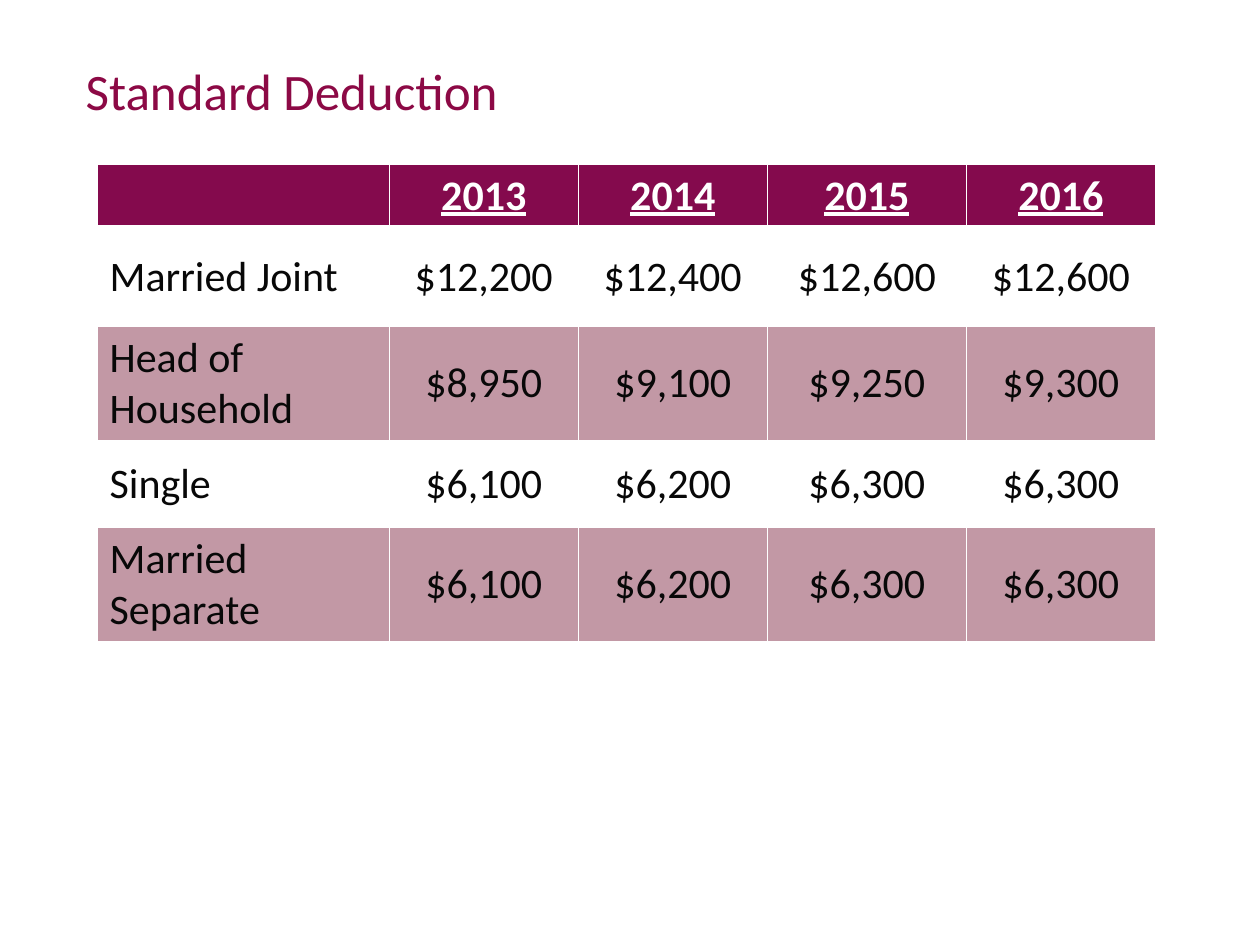
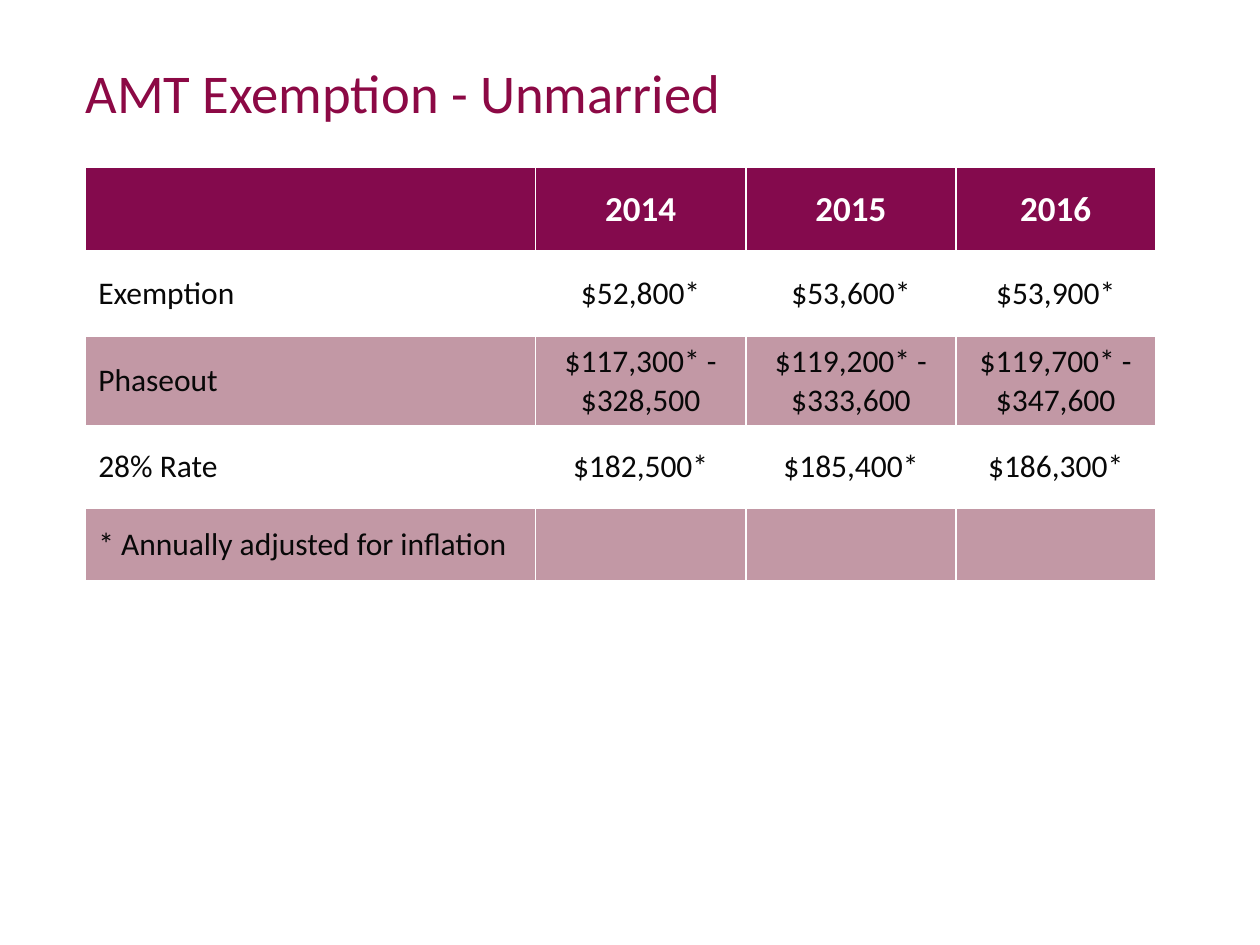
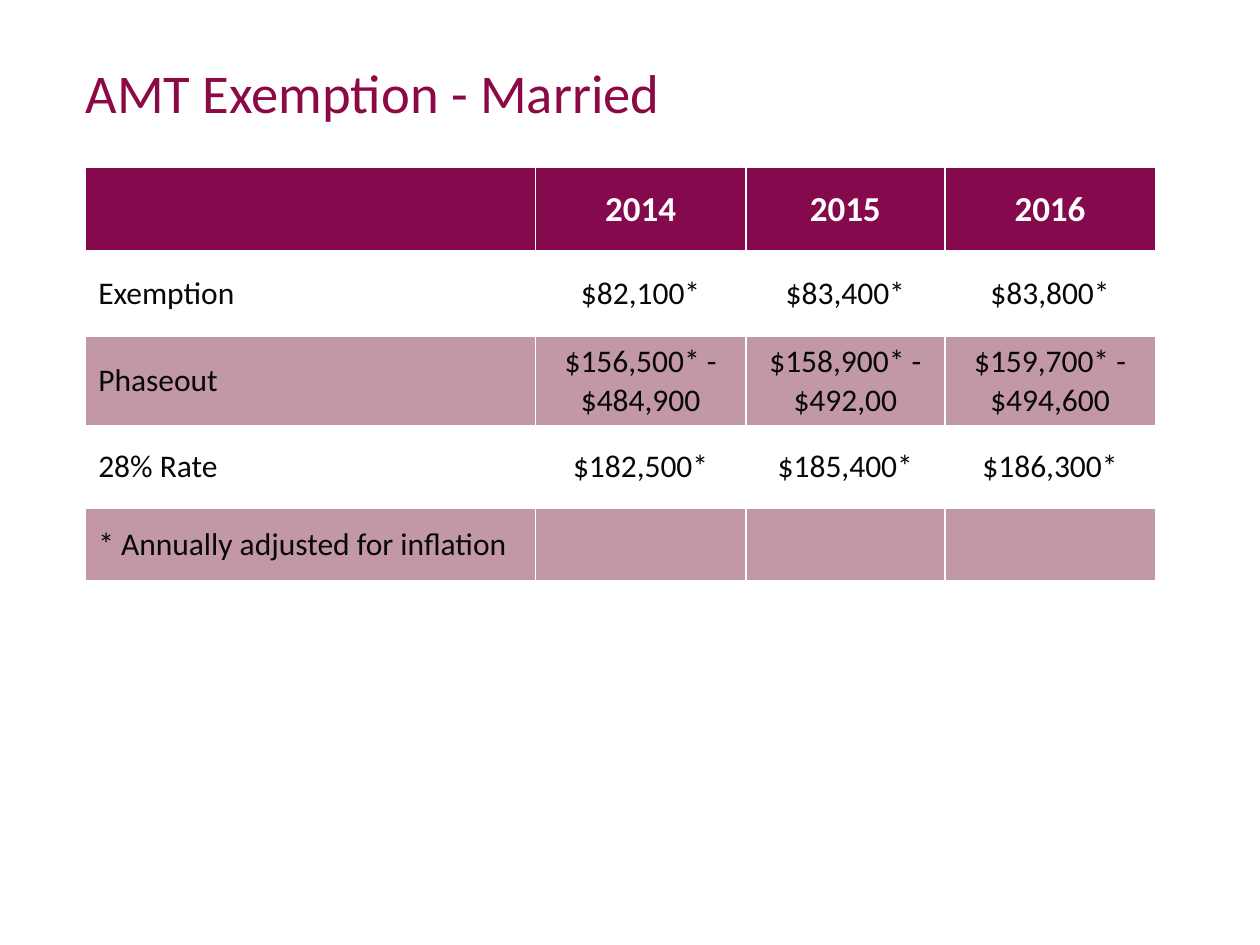
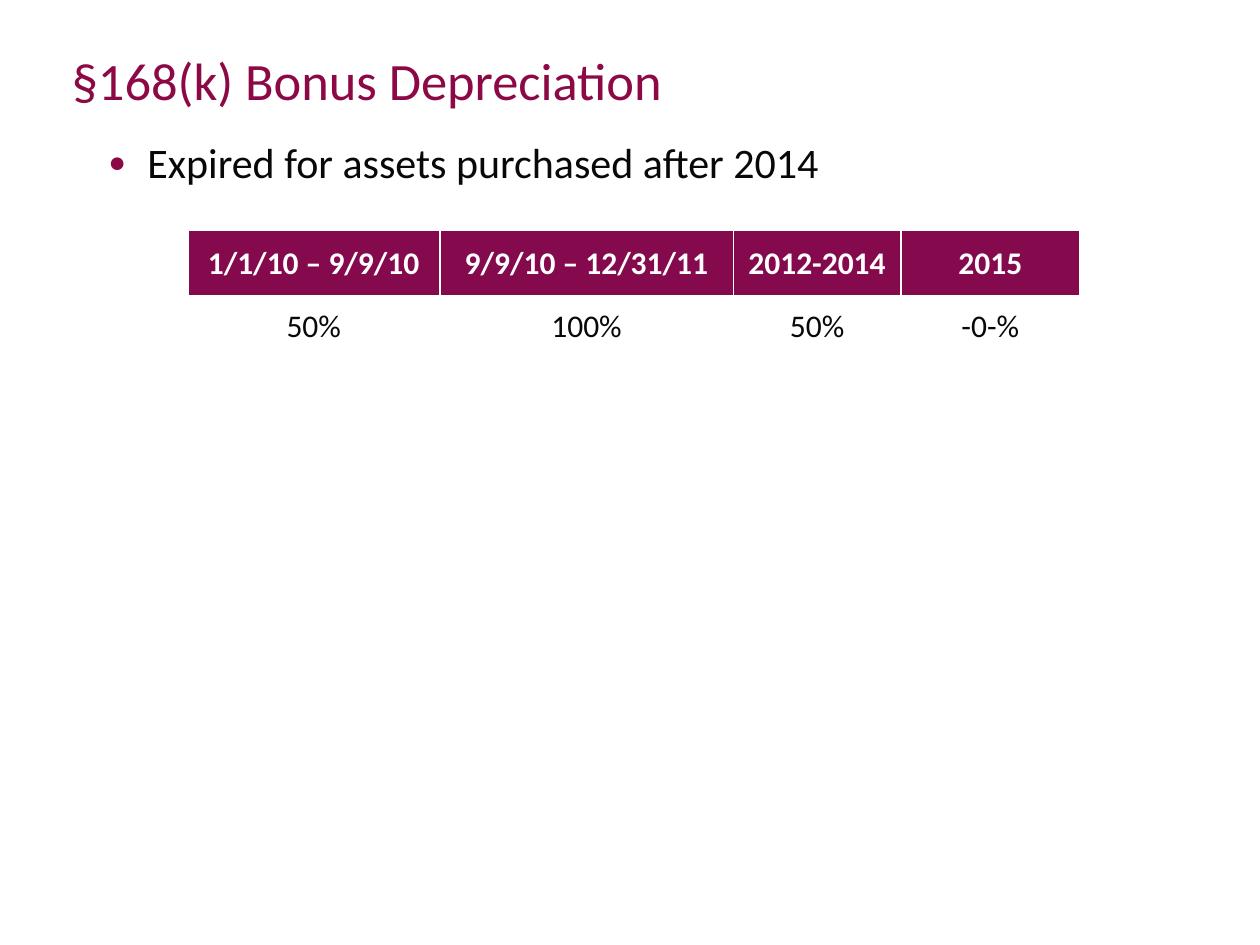
from dataclasses import dataclass

from lxml import etree
from pptx import Presentation
from pptx import util as u
from pptx.dml.color import RGBColor
from pptx.enum import text
from pptx.oxml import ns


@dataclass(frozen=True)
class Theme:
    font: str = "Calibri"
    title_color: str = "8C0945"
    header_fill: str = "840A4D"
    band_fill: str = "C298A5"
    plain_fill: str = "FFFFFF"
    header_text: str = "FFFFFF"
    body_text: str = "080808"
    border: str = "FFFFFF"
    bullet_size: float = 24
    border_width: float = 1
    header_rule: float = 3


theme = Theme()


def add_run(paragraph, words, size, color, bold=False, underline=False):
    run = paragraph.add_run()
    run.text = words
    run.font.name = theme.font
    run.font.size = u.Pt(size)
    run.font.color.rgb = RGBColor.from_string(color)
    run.font.bold = bold
    run.font.underline = underline


def add_border(cell, side, width):
    line = etree.SubElement(cell._tc.get_or_add_tcPr(), ns.qn(f"a:ln{side}"), w=str(u.Pt(width)))
    fill = etree.SubElement(line, ns.qn("a:solidFill"))
    etree.SubElement(fill, ns.qn("a:srgbClr"), val=theme.border)


title_box = (0.58, 0.42, 8.67, 1.25)
exemption_rows = [0.67, 0.67, 0.69, 0.65, 0.58]
exemption_years = ["", "2014", "2015", "2016"]
rate_row = ["28% Rate", "$182,500*", "$185,400*", "$186,300*"]
inflation_row = ["* Annually adjusted for inflation", "", "", ""]

pages = [
    {
        "title": "Standard Deduction",
        "title_box": title_box,
        "title_size": 29.2,
        "table_at": (0.77, 1.3),
        "columns": [2.32, 1.5, 1.5, 1.58, 1.5],
        "rows": [0.5, 0.78, 0.58, 0.68, 0.58],
        "header_size": 24,
        "cell_size": 24,
        "underline": True,
        "cells": [
            ["", "2013", "2014", "2015", "2016"],
            ["Married Joint", "$12,200", "$12,400", "$12,600", "$12,600"],
            ["Head of Household", "$8,950", "$9,100", "$9,250", "$9,300"],
            ["Single", "$6,100", "$6,200", "$6,300", "$6,300"],
            ["Married Separate", "$6,100", "$6,200", "$6,300", "$6,300"],
        ],
    },
    {
        "title": "AMT Exemption - Unmarried",
        "title_box": title_box,
        "title_size": 31.2,
        "table_at": (0.68, 1.33),
        "columns": [3.57, 1.67, 1.67, 1.58],
        "rows": exemption_rows,
        "header_size": 20,
        "cell_size": 18,
        "cells": [
            exemption_years,
            ["Exemption", "$52,800*", "$53,600*", "$53,900*"],
            ["Phaseout", "$117,300* - $328,500", "$119,200* - $333,600", "$119,700* - $347,600"],
            rate_row,
            inflation_row,
        ],
    },
    {
        "title": "AMT Exemption - Married",
        "title_box": title_box,
        "title_size": 31.2,
        "table_at": (0.68, 1.33),
        "columns": [3.57, 1.67, 1.58, 1.67],
        "rows": exemption_rows,
        "header_size": 20,
        "cell_size": 18,
        "cells": [
            exemption_years,
            ["Exemption", "$82,100*", "$83,400*", "$83,800*"],
            ["Phaseout", "$156,500* - $484,900", "$158,900* - $492,00", "$159,700* - $494,600"],
            rate_row,
            inflation_row,
        ],
    },
    {
        "title": "§168(k) Bonus Depreciation",
        "title_box": (0.47, 0.33, 8.93, 0.75),
        "title_size": 30,
        "bullet": "Expired for assets purchased after 2014",
        "bullet_box": (0.67, 1.08, 8.73, 5.83),
        "table_at": (1.49, 1.83),
        "columns": [2, 2.33, 1.33, 1.42],
        "rows": [0.53, 0.47],
        "header_size": 18,
        "cell_size": 18,
        "centre_first": True,
        "cells": [
            ["1/1/10 – 9/9/10", "9/9/10 – 12/31/11", "2012-2014", "2015"],
            ["50%", "100%", "50%", "-0-%"],
        ],
    },
]

presentation = Presentation()
presentation.slide_width = u.Inches(10)
presentation.slide_height = u.Inches(7.5)
bullet_layout, title_layout = presentation.slide_layouts[1], presentation.slide_layouts[5]

for page in pages:
    slide = presentation.slides.add_slide(bullet_layout if "bullet" in page else title_layout)

    title = slide.shapes.title
    title.left, title.top, title.width, title.height = map(u.Inches, page["title_box"])
    title.text_frame.auto_size = text.MSO_AUTO_SIZE.NONE
    title.text_frame.vertical_anchor = text.MSO_ANCHOR.TOP
    paragraph = title.text_frame.paragraphs[0]
    paragraph.alignment = text.PP_ALIGN.LEFT
    add_run(paragraph, page["title"], page["title_size"], theme.title_color)

    if "bullet" in page:
        body = slide.placeholders[1]
        body.left, body.top, body.width, body.height = map(u.Inches, page["bullet_box"])
        body.text_frame.auto_size = text.MSO_AUTO_SIZE.NONE
        paragraph = body.text_frame.paragraphs[0]
        paragraph.line_spacing = 0.9
        paragraph.space_before = u.Pt(0)
        paragraph.space_after = u.Pt(10)
        properties = paragraph._p.get_or_add_pPr()
        properties.set("marL", str(u.Inches(0.4)))
        properties.set("indent", str(u.Inches(-0.31)))
        bullet_color = etree.SubElement(properties, ns.qn("a:buClr"))
        etree.SubElement(bullet_color, ns.qn("a:srgbClr"), val=theme.title_color)
        etree.SubElement(properties, ns.qn("a:buSzPct"), val="70000")
        etree.SubElement(properties, ns.qn("a:buChar"), char="●")
        add_run(paragraph, page["bullet"], theme.bullet_size, theme.body_text)

    left, top = page["table_at"]
    columns, rows = page["columns"], page["rows"]
    table = slide.shapes.add_table(
        len(rows), len(columns), u.Inches(left), u.Inches(top),
        u.Inches(sum(columns)), u.Inches(sum(rows)),
    ).table
    for column, width in zip(table.columns, columns):
        column.width = u.Inches(width)

    for row_index, (height, row) in enumerate(zip(rows, page["cells"])):
        table.rows[row_index].height = u.Inches(height)
        header = row_index == 0
        banded = theme.plain_fill if row_index % 2 else theme.band_fill
        for column_index, words in enumerate(row):
            cell = table.cell(row_index, column_index)
            for side in "LRTB":
                heavy = header and side == "B"
                add_border(cell, side, theme.header_rule if heavy else theme.border_width)
            cell.fill.solid()
            cell.fill.fore_color.rgb = RGBColor.from_string(theme.header_fill if header else banded)
            cell.vertical_anchor = text.MSO_ANCHOR.MIDDLE
            if not words:
                continue
            paragraph = cell.text_frame.paragraphs[0]
            centred = header or column_index > 0 or page.get("centre_first", False)
            paragraph.alignment = text.PP_ALIGN.CENTER if centred else text.PP_ALIGN.LEFT
            add_run(
                paragraph, words,
                page["header_size"] if header else page["cell_size"],
                theme.header_text if header else theme.body_text,
                bold=header,
                underline=header and page.get("underline", False),
            )

presentation.save("out.pptx")
